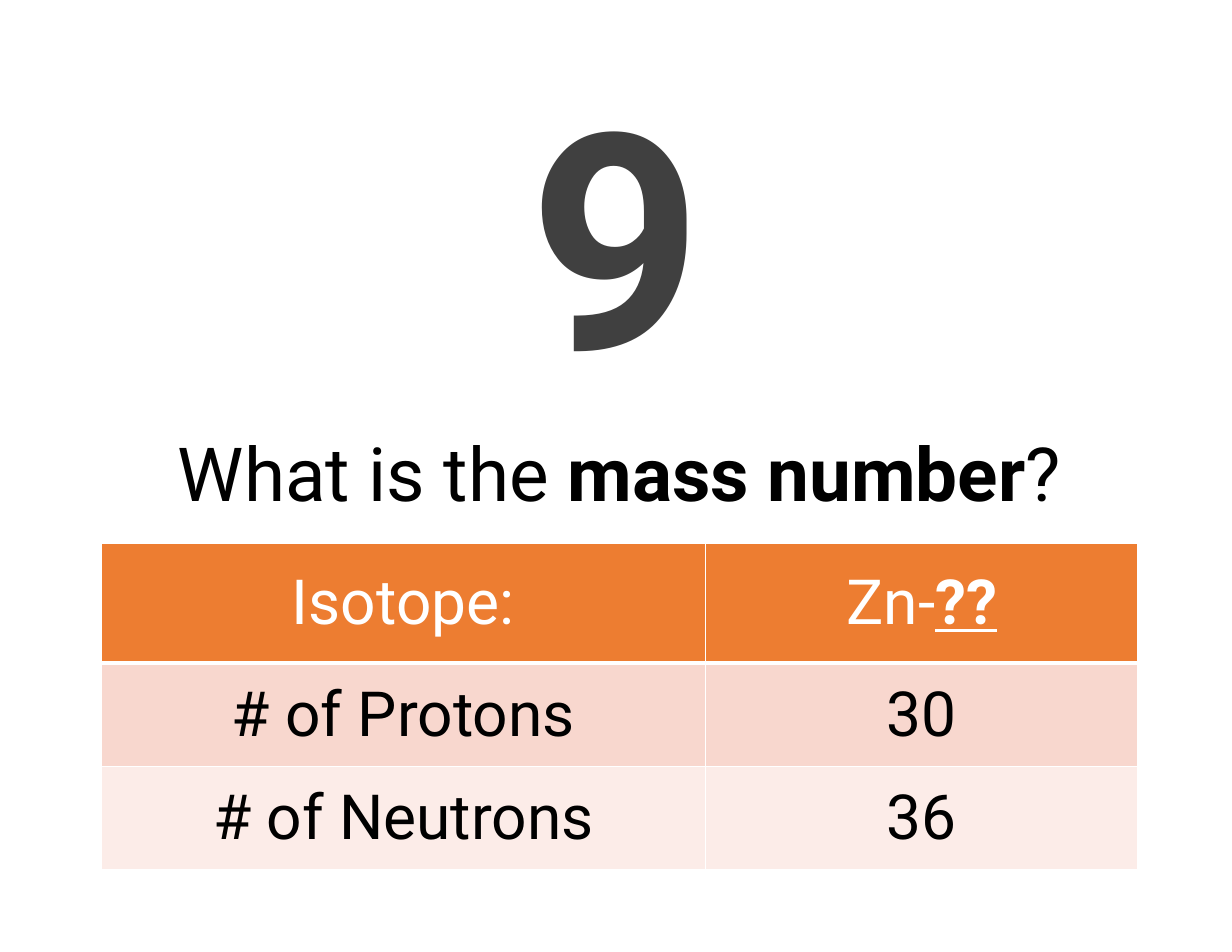
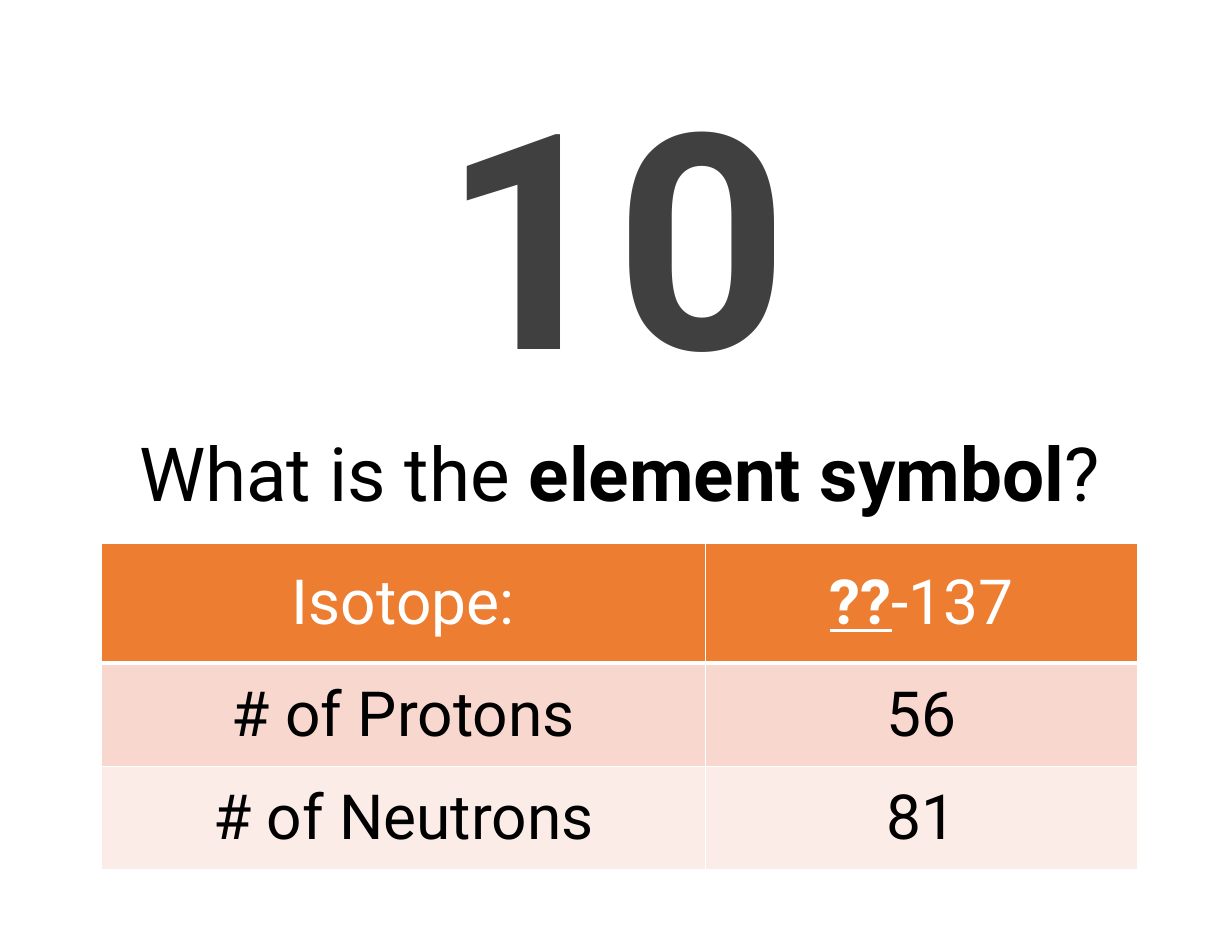
from lxml.etree import SubElement
from pptx import Presentation
from pptx.dml.color import RGBColor
from pptx.enum.text import MSO_ANCHOR, PP_ALIGN
from pptx.oxml.ns import qn
from pptx.util import Cm, Pt

FONT = "Roboto"
COLORS = {
    "text": "000000",
    "number": "404040",
    "white": "FFFFFF",
    "header": "ED7D31",
    "band_dark": "F8D7CE",
    "band_light": "FCECE8",
}
COLUMN_WIDTHS = [13.71, 9.81]
ROW_HEIGHTS = [2.72, 2.34, 2.34]
ROW_FILLS = ["header", "band_dark", "band_light"]

# Runs marked True are emphasised
QUESTIONS = [
    {"number": "9", "asked": "mass number",
     "isotope": [("Zn-", False), ("??", True)], "protons": "30", "neutrons": "36"},
    {"number": "10", "asked": "element symbol",
     "isotope": [("??", True), ("-137", False)], "protons": "56", "neutrons": "81"},
]


def write_text(text_frame, runs, size, color="text", underline=False, line_spacing=None):
    """Write one centred paragraph; emphasised runs are bold, and underlined on request."""
    text_frame.word_wrap = True
    paragraph = text_frame.paragraphs[0]
    paragraph.alignment = PP_ALIGN.CENTER
    paragraph.line_spacing = line_spacing
    for text, emphasised in runs:
        run = paragraph.add_run()
        run.text = text
        run.font.name = FONT
        run.font.size = Pt(size)
        run.font.color.rgb = RGBColor.from_string(COLORS[color])
        run.font.bold = emphasised
        run.font.underline = emphasised and underline


def set_borders(cell, bottom_width):
    """Give the cell white borders, placed before its fill as the schema asks."""
    properties = cell._tc.get_or_add_tcPr()
    for position, side in enumerate(["lnL", "lnR", "lnT", "lnB"]):
        width = bottom_width if side == "lnB" else 1
        line = SubElement(properties, qn(f"a:{side}"), w=str(Pt(width)))
        fill = SubElement(line, qn("a:solidFill"))
        SubElement(fill, qn("a:srgbClr"), val=COLORS["white"])
        properties.insert(position, line)


presentation = Presentation()
presentation.slide_width = Cm(27.94)
presentation.slide_height = Cm(21.59)

for question in QUESTIONS:
    slide = presentation.slides.add_slide(presentation.slide_layouts[5])

    # Question
    title = slide.shapes.title
    title.left, title.top, title.width, title.height = Cm(2.29), Cm(9.35), Cm(23.52), Cm(2.97)
    title.text_frame.vertical_anchor = MSO_ANCHOR.MIDDLE
    write_text(title.text_frame,
               [("What is the ", False), (question["asked"], True), ("?", False)],
               size=48, line_spacing=0.9)

    # Isotope table
    rows = [
        [[("Isotope:", False)], question["isotope"]],
        [[("# of Protons", False)], [(question["protons"], False)]],
        [[("# of Neutrons", False)], [(question["neutrons"], False)]],
    ]
    table = slide.shapes.add_table(
        len(ROW_HEIGHTS), len(COLUMN_WIDTHS), Cm(2.29), Cm(12.32),
        Cm(sum(COLUMN_WIDTHS)), Cm(sum(ROW_HEIGHTS))).table
    for column, width in zip(table.columns, COLUMN_WIDTHS):
        column.width = Cm(width)
    for row_index, row in enumerate(rows):
        is_header = row_index == 0
        table.rows[row_index].height = Cm(ROW_HEIGHTS[row_index])
        for column_index, runs in enumerate(row):
            cell = table.cell(row_index, column_index)
            cell.vertical_anchor = MSO_ANCHOR.MIDDLE
            cell.fill.solid()
            cell.fill.fore_color.rgb = RGBColor.from_string(COLORS[ROW_FILLS[row_index]])
            set_borders(cell, bottom_width=3 if is_header else 1)
            write_text(cell.text_frame, runs, size=40, underline=True,
                       color="white" if is_header else "text")

    # Question number
    number_box = slide.shapes.add_textbox(
        Cm(0), Cm(1.93), presentation.slide_width, Cm(7.57))
    number_box.text_frame.vertical_anchor = MSO_ANCHOR.MIDDLE
    write_text(number_box.text_frame, [(question["number"], True)],
               size=194, color="number", line_spacing=0.9)

presentation.save("out.pptx")
